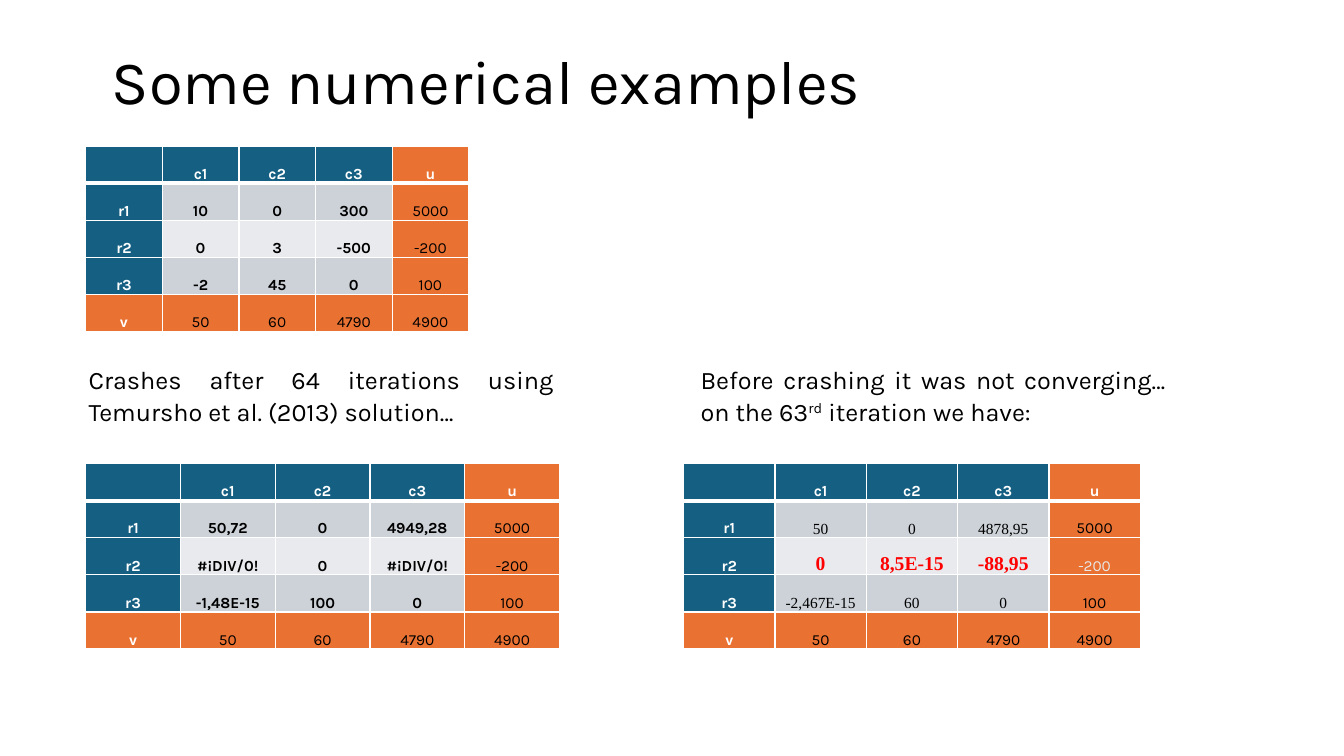
from lxml import etree
from pptx import Presentation
from pptx.dml.color import RGBColor
from pptx.enum.text import MSO_ANCHOR, MSO_AUTO_SIZE, PP_ALIGN
from pptx.oxml.ns import qn
from pptx.util import Inches, Pt

LEFT, CENTER, JUSTIFY = PP_ALIGN.LEFT, PP_ALIGN.CENTER, PP_ALIGN.JUSTIFY
MIDDLE, BOTTOM = MSO_ANCHOR.MIDDLE, MSO_ANCHOR.BOTTOM
FIT_SHAPE = MSO_AUTO_SIZE.SHAPE_TO_FIT_TEXT

THEME = {
    "font": "Karla", "serif": "Times New Roman",
    "title": 44, "caption": 18, "cell": 11, "alert": 14,
    "black": "000000", "white": "FFFFFF", "red": "FF0000", "pale": "E8E8E8",
    "header": "156082", "total": "E97132", "bands": ["CCD2D8", "E8EAED"],
}


def set_font(paragraph, size, color="black", bold=False, face="font"):
    font = paragraph.font
    font.name = THEME[face]
    font.size = Pt(THEME[size])
    font.bold = bold
    font.color.rgb = RGBColor.from_string(THEME[color])


def set_borders(cell, row):
    properties = cell._tc.get_or_add_tcPr()
    widths = {"lnL": 1, "lnR": 1, "lnT": 3 if row == 1 else 1, "lnB": 3 if row == 0 else 1}
    for index, (side, width) in enumerate(widths.items()):
        line = etree.Element(qn(f"a:{side}"), w=str(Pt(width)))
        fill = etree.SubElement(line, qn("a:solidFill"))
        etree.SubElement(fill, qn("a:srgbClr"), val=THEME["white"])
        properties.insert(index, line)


examples = [
    {
        "left": 0.85, "top": 1.45, "width": 3.8, "inset": 0.05,
        "values": [["10", "0", "300"], ["0", "3", "-500"], ["-2", "45", "0"]],
    },
    {
        "left": 0.85, "top": 4.6, "width": 4.7, "inset": 0.01,
        "values": [["50,72", "0", "4949,28"], ["#¡DIV/0!", "0", "#¡DIV/0!"],
                   ["-1,48E-15", "100", "0"]],
        "caption_left": 0.78,
        "caption": [("Crashes after 64 iterations using Temursho et al. (2013) solution…", 0)],
    },
    {
        "left": 6.78, "top": 4.6, "width": 4.53, "inset": 0.01,
        "values": [["50", "0", "4878,95"], ["0", "8,5E-15", "-88,95"],
                   ["-2,467E-15", "60", "0"]],
        "plain": {"face": "serif"},
        "alert": {"face": "serif", "size": "alert", "color": "red", "bold": True},
        "alert_total": {"color": "pale"},
        "caption_left": 6.85,
        "caption": [("Before crashing it was not converging…on the 63", 0), ("rd", 30000),
                    (" iteration we have:", 0)],
    },
]
row_totals = ["5000", "-200", "100"]
header_row = ["", "c1", "c2", "c3", "u"]
total_row = ["v", "50", "60", "4790", "4900"]

deck = Presentation()
deck.slide_width, deck.slide_height = Inches(13.33), Inches(7.5)
page = deck.slides.add_slide(deck.slide_layouts[5])

title = page.shapes.title
title.left, title.top = Inches(1.01), Inches(0.15)
title.width, title.height = Inches(11.32), Inches(1.38)
title.text_frame.text = "Some numerical examples"
title.text_frame.vertical_anchor = MIDDLE
para = title.text_frame.paragraphs[0]
para.alignment, para.line_spacing = LEFT, 0.9
set_font(para, "title")

for example in examples:
    rows = [header_row]
    for number, (values, total) in enumerate(zip(example["values"], row_totals), 1):
        rows.append([f"r{number}", *values, total])
    rows.append(total_row)

    table = page.shapes.add_table(
        5, 5, Inches(example["left"]), Inches(example["top"]),
        Inches(example["width"]), Inches(1.84)).table
    for row, texts in enumerate(rows):
        for column, text in enumerate(texts):
            cell = table.cell(row, column)
            is_label = row == 0 or column == 0
            is_total = row == 4 or column == 4
            is_value = not is_label and not is_total
            inset = example["inset"] if is_value else 0.05
            style = {"size": "cell", "bold": True}
            if is_label:
                shade = THEME["total" if is_total else "header"]
                style["color"] = "white"
            elif is_total:
                shade = THEME["total"]
                style["bold"] = False
                if row == 2:
                    style.update(example.get("alert_total", {}))
            else:
                shade = THEME["bands"][(row - 1) % 2]
                if "plain" in example:
                    style["bold"] = False
                    style.update(example["alert" if row == 2 else "plain"])

            cell.fill.solid()
            cell.fill.fore_color.rgb = RGBColor.from_string(shade)
            cell.vertical_anchor = BOTTOM
            cell.margin_left = cell.margin_right = Inches(inset)
            cell.margin_top = Inches(0.01 if inset == 0.01 else 0)
            cell.margin_bottom = 0
            set_borders(cell, row)
            cell.text = text
            para = cell.text_frame.paragraphs[0]
            para.alignment = CENTER
            if inset == 0.05:
                para.line_spacing, para.space_after = 1.07, Pt(8)
            set_font(para, **style)

    if "caption" in example:
        box = page.shapes.add_textbox(
            Inches(example["caption_left"]), Inches(3.54), Inches(4.81), Inches(0.74))
        box.text_frame.word_wrap = True
        box.text_frame.auto_size = FIT_SHAPE
        para = box.text_frame.paragraphs[0]
        para.alignment, para.line_spacing, para.space_after = JUSTIFY, 1.07, Pt(8)
        set_font(para, "caption")
        for text, baseline in example["caption"]:
            span = para.add_run()
            span.text = text
            if baseline:
                span.font._element.set("baseline", str(baseline))

deck.save("out.pptx")
